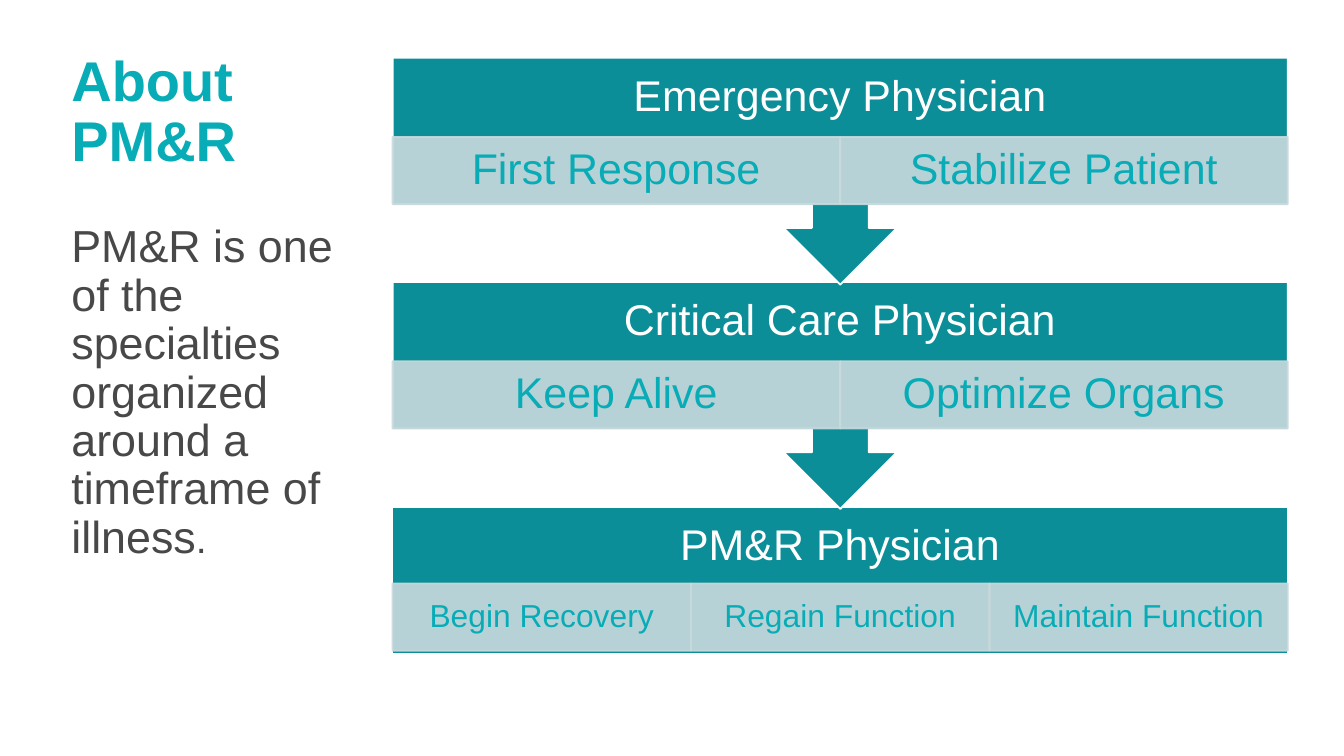
from typing import NamedTuple

from lxml.etree import SubElement
from pptx import Presentation
from pptx.dml.color import RGBColor as Rgb
from pptx.dml.fill import FillFormat as Fill
from pptx.enum.shapes import MSO_SHAPE as Kind
from pptx.enum.text import MSO_ANCHOR as Anchor, PP_ALIGN as Align
from pptx.oxml.ns import qn
from pptx.shapes.autoshape import Shape
from pptx.util import Cm, Pt

TEAL, AQUA, PALE, WHITE, GREY = "0B8E97", "08ACB6", "C9DADD", "FFFFFF", "484848"
LEFT, WIDE = 7.42, 16.92
HEAD, CELL = 1.5, 1.27


class Box(NamedTuple):
    x: float
    y: float
    w: float
    h: float


class Run(NamedTuple):
    text: str
    size: float
    hue: str
    bold: bool = False


class Stage(NamedTuple):
    title: str
    tasks: list[str]
    top: float
    tall: float
    drop: float
    size: float
    pad: tuple[float, float]
    kind: Kind


STAGES = [
    Stage("PM&R Physician", ["Begin Recovery", "Regain Function", "Maintain Function"],
          9.58, 2.79, 1.45, 17, (0.33, 0.05), Kind.RECTANGLE),
    Stage("Critical Care Physician", ["Keep Alive", "Optimize Organs"],
          5.33, 4.29, HEAD, 23, (0.45, 0.08), Kind.UP_ARROW_CALLOUT),
    Stage("Emergency Physician", ["First Response", "Stabilize Patient"],
          1.09, 4.29, HEAD, 23, (0.45, 0.08), Kind.UP_ARROW_CALLOUT),
]


def paint(fill: Fill, hue: str, alpha: int = 100) -> None:
    fill.solid()
    fill.fore_color.rgb = Rgb.from_string(hue)
    if alpha < 100:
        node = fill._xPr.find(qn("a:solidFill"))[0]
        SubElement(node, qn("a:alpha")).set("val", str(alpha * 1000))


def write(shape: Shape, runs: list[Run], pad: tuple[float, float],
          align: Align = Align.CENTER, anchor: Anchor = Anchor.MIDDLE) -> None:
    side, edge = Cm(pad[0]), Cm(pad[1])
    frame = shape.text_frame
    style = {"word_wrap": True, "vertical_anchor": anchor,
             "margin_left": side, "margin_right": side,
             "margin_top": edge, "margin_bottom": edge}
    for name, value in style.items():
        setattr(frame, name, value)
    para = frame.paragraphs[0]
    for name, value in {"alignment": align, "line_spacing": 0.9}.items():
        setattr(para, name, value)
    for item in runs:
        run = para.add_run()
        run.text = item.text
        style = {"name": "Arial", "size": Pt(item.size), "bold": item.bold}
        for name, value in style.items():
            setattr(run.font, name, value)
        paint(run.font.fill, item.hue)


def add_block(shapes, kind: Kind, box: Box, hue: str, edge: str, alpha: int = 100) -> Shape:
    shape = shapes.add_shape(kind, *map(Cm, box))
    shape.shadow.inherit = False
    paint(shape.fill, hue, alpha)
    paint(shape.line.fill, edge, alpha)
    shape.line.width = Pt(1)
    return shape


def add_text(shapes, box: Box, runs: list[Run], pad: tuple[float, float],
             align: Align = Align.CENTER, anchor: Anchor = Anchor.MIDDLE) -> None:
    write(shapes.add_textbox(*map(Cm, box)), runs, pad, align, anchor)


def add_stage(shapes, stage: Stage) -> None:
    block = add_block(shapes, stage.kind, Box(LEFT, stage.top, WIDE, stage.tall), TEAL, WHITE)
    if stage.kind == Kind.UP_ARROW_CALLOUT:
        block.rotation = 180
        for i, value in enumerate([0.25, 0.25, 0.25, 0.65]):
            block.adjustments[i] = value
    add_text(shapes, Box(LEFT, stage.top, WIDE, HEAD),
             [Run(stage.title, 23, WHITE)], (0.45, 0.45))
    step = WIDE / len(stage.tasks)
    for i, task in enumerate(stage.tasks):
        box = Box(LEFT + i * step, stage.top + stage.drop, step, CELL)
        cell = add_block(shapes, Kind.RECTANGLE, box, PALE, PALE, 90)
        write(cell, [Run(task, stage.size, AQUA)], stage.pad)


def main() -> None:
    deck = Presentation()
    deck.slide_width, deck.slide_height = Cm(25.4), Cm(14.29)
    shapes = deck.slides.add_slide(deck.slide_layouts[6]).shapes
    pad = (0.18, 0.1)
    add_text(shapes, Box(1.17, 0.76, 5.26, 2.77),
             [Run("About PM&R", 30, AQUA, True)], pad, Align.LEFT)
    story = "PM&R is one of the specialties organized around a timeframe of illness"
    add_text(shapes, Box(1.17, 4.14, 5.79, 9.07),
             [Run(story, 24, GREY), Run(".", 21, GREY)], pad, Align.LEFT, Anchor.TOP)
    for stage in STAGES:
        add_stage(shapes, stage)
    deck.save("out.pptx")


if __name__ == "__main__":
    main()
